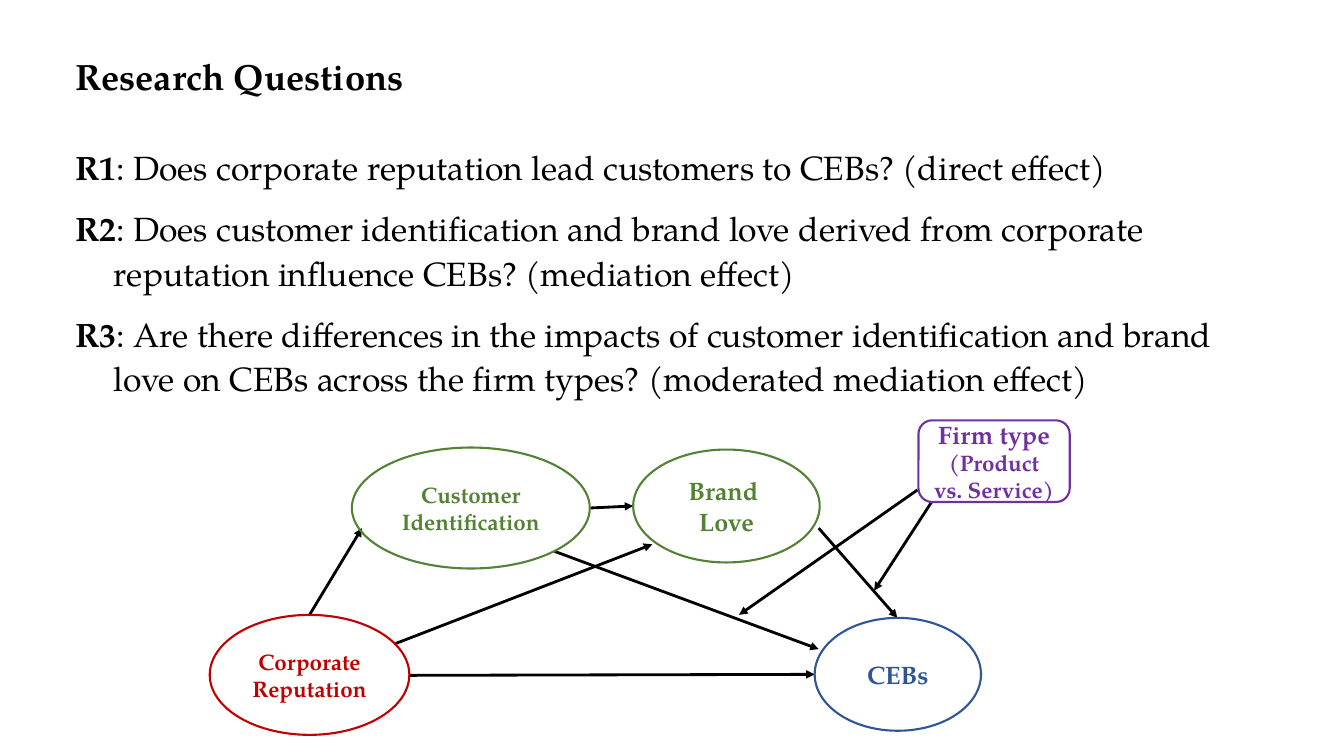
from lxml import etree
from pptx import Presentation
from pptx.dml.color import RGBColor
from pptx.enum import shapes, text
from pptx.oxml.ns import qn
from pptx.util import Inches, Pt

FONT = "TeX Gyre Pagella"
BLACK = RGBColor(0x00, 0x00, 0x00)
RED = RGBColor(0xC0, 0x00, 0x00)
BLUE = RGBColor(0x2F, 0x55, 0x97)
GREEN = RGBColor(0x54, 0x82, 0x35)
PURPLE = RGBColor(0x70, 0x30, 0xA0)
OVAL = shapes.MSO_SHAPE.OVAL
ROUNDED = shapes.MSO_SHAPE.ROUNDED_RECTANGLE

TITLE = "Research Questions"
QUESTIONS = [
    ("R1", ": Does corporate reputation lead customers to CEBs? (direct effect)"),
    ("R2", ": Does customer identification and brand love derived from corporate "
           "reputation influence CEBs? (mediation effect)"),
    ("R3", ": Are there differences in the impacts of customer identification and brand "
           "love on CEBs across the firm types? (moderated mediation effect)"),
]
# preset, (left, top, width, height), colour, [(line, size)]
NODES = [
    (OVAL, (2.08, 6.1, 1.98, 1.19), RED, [("Corporate Reputation", 16)]),
    (OVAL, (8.08, 6.13, 1.65, 1.12), BLUE, [("CEBs", 18)]),
    (OVAL, (3.49, 4.44, 2.36, 1.2), GREEN, [("Customer Identification", 16)]),
    (OVAL, (6.28, 4.46, 1.85, 1.12), GREEN, [("Brand ", 18), ("Love", 18)]),
    (ROUNDED, (9.11, 4.17, 1.5, 0.81), PURPLE,
     [("Firm type", 18), ("(Product vs. Service)", 16)]),
]
# start x, start y, end x, end y
ARROWS = [
    (4.06, 6.7, 8.08, 6.69),    # reputation to CEBs
    (3.07, 6.1, 3.59, 5.24),    # reputation to identification
    (5.5, 5.47, 8.12, 6.44),    # identification to CEBs
    (3.91, 6.39, 6.47, 5.4),    # reputation to love
    (8.12, 5.24, 8.9, 6.13),    # love to CEBs
    (5.85, 5.04, 6.28, 5.02),   # identification to love
    (9.1, 4.86, 7.33, 6.1),     # firm type to identification path
    (9.24, 4.98, 8.67, 5.86),   # firm type to love path
]


def inches(values):
    return [Inches(v) for v in values]


def style(font, size, color, bold=None):
    font.name, font.size, font.bold = FONT, Pt(size), bold
    font.color.rgb = color


def paragraphs(tf, items):
    """Yield each item with its own paragraph of the frame."""
    tf.word_wrap = True
    for i, item in enumerate(items):
        yield (tf.add_paragraph() if i else tf.paragraphs[0]), item


def add_title(s):
    tf = s.shapes.add_textbox(*inches((0.65, 0.28, 8.62, 1.01))).text_frame
    tf.vertical_anchor = text.MSO_ANCHOR.MIDDLE
    for p, line in paragraphs(tf, [TITLE]):
        p.text, p.line_spacing = line, 0.9
        style(p.font, 26, BLACK, True)


def add_questions(s):
    tf = s.shapes.add_textbox(*inches((0.65, 1.37, 12.06, 2.21))).text_frame
    for p, (label, question) in paragraphs(tf, QUESTIONS):
        p.line_spacing, p.space_after = 1.1, Pt(12)
        pPr = p._p.get_or_add_pPr()
        pPr.set("marL", str(Inches(0.38)))
        pPr.set("indent", str(Inches(-0.38)))
        style(p.font, 24, BLACK)
        for part, bold in ((label, True), (question, False)):
            r = p.add_run()
            r.text, r.font.bold = part, bold


def add_arrow(s, ends):
    c = s.shapes.add_connector(shapes.MSO_CONNECTOR.STRAIGHT, *inches(ends))
    c.line.color.rgb, c.line.width = BLACK, Pt(2)
    etree.SubElement(c.line._get_or_add_ln(), qn("a:tailEnd"), type="triangle")
    etree.SubElement(c._element.spPr, qn("a:effectLst"))


def add_node(s, preset, box, color, lines):
    sp = s.shapes.add_shape(preset, *inches(box))
    sp.shadow.inherit = False
    sp.fill.background()
    sp.line.color.rgb, sp.line.width = color, Pt(1.5)
    tf = sp.text_frame
    tf.vertical_anchor = text.MSO_ANCHOR.MIDDLE
    for p, (line, size) in paragraphs(tf, lines):
        p.text, p.alignment = line, text.PP_ALIGN.CENTER
        style(p.font, size, color, True)


def main():
    prs = Presentation()
    prs.slide_width, prs.slide_height = inches((13.33, 7.5))
    s = prs.slides.add_slide(prs.slide_layouts[6])
    add_title(s)
    add_questions(s)
    for ends in ARROWS:
        add_arrow(s, ends)
    for node in NODES:
        add_node(s, *node)
    prs.save("out.pptx")


if __name__ == "__main__":
    main()
